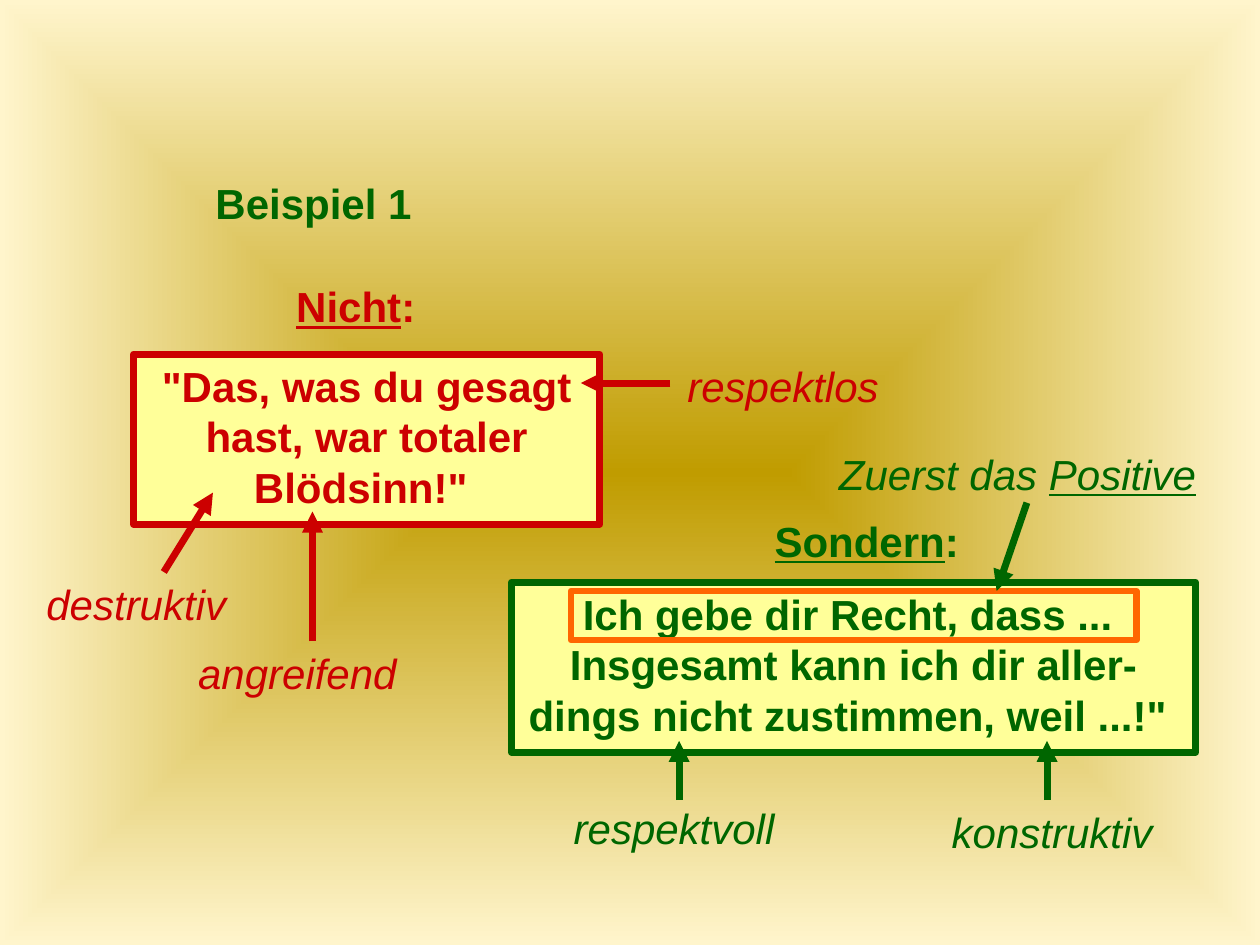
from typing import NamedTuple

from lxml import etree
from pptx import Presentation
from pptx import util as u
from pptx.dml.color import RGBColor
from pptx.enum import shapes, text
from pptx.oxml import ns

RED, GREEN, ORANGE, YELLOW = "CC0000", "006600", "FF6600", "FFFF99"
GOLD, CREAM = "C09C00", "FFF5CC"
LINE_WIDTH = 4
CENTER, LEFT = text.PP_ALIGN.CENTER, text.PP_ALIGN.LEFT


class Box(NamedTuple):
    left: float
    top: float
    width: float
    height: float


class Label(NamedTuple):
    box: Box
    content: str
    color: str
    underlined: str = ""
    bold: bool = False
    align: text.PP_ALIGN = CENTER


class Quote(NamedTuple):
    box: Box
    content: str
    color: str


class Arrow(NamedTuple):
    start: tuple[float, float]
    end: tuple[float, float]
    color: str


QUOTES = [
    Quote(Box(1.06, 2.81, 3.7, 1.35),
          '"Das, was du gesagt hast, war totaler Blödsinn!" ', RED),
    Quote(Box(4.06, 4.62, 5.43, 1.35),
          "Ich gebe dir Recht, dass ... \nInsgesamt kann ich dir aller-\n"
          'dings nicht zustimmen, weil ...!" ', GREEN),
]
TITLE = Label(Box(1.61, 1.36, 2.13, 0.5), "Beispiel 1", GREEN, bold=True, align=LEFT)
LABELS = [
    Label(Box(2.24, 2.18, 1.26, 0.5), "Nicht: ", RED, "Nicht", bold=True),
    Label(Box(6.02, 4.04, 1.81, 0.5), "Sondern: ", GREEN, "Sondern", bold=True),
    Label(Box(0.27, 4.54, 2.28, 0.5), "destruktiv", RED, align=LEFT),
    Label(Box(5.31, 2.81, 1.81, 0.5), "respektlos", RED),
    Label(Box(1.14, 5.09, 2.44, 0.5), "angreifend", RED),
    Label(Box(4.13, 6.32, 2.44, 0.5), "respektvoll", GREEN),
    Label(Box(7.13, 6.35, 2.44, 0.5), "konstruktiv", GREEN),
    Label(Box(6.5, 3.51, 3.15, 0.5), "Zuerst das Positive", GREEN, "Positive"),
]
HIGHLIGHT = Box(4.53, 4.69, 4.49, 0.39)
ARROWS = [
    Arrow((1.3, 4.54), (1.69, 3.91), RED),
    Arrow((2.48, 5.09), (2.48, 4.06), RED),
    Arrow((5.32, 3.04), (4.61, 3.04), RED),
    Arrow((5.39, 6.35), (5.39, 5.88), GREEN),
    Arrow((8.31, 6.35), (8.31, 5.88), GREEN),
    Arrow((8.15, 3.99), (7.91, 4.69), GREEN),
]


def rgb(color: str) -> RGBColor:
    return RGBColor.from_string(color)


def inches(values) -> list[u.Length]:
    return [u.Inches(value) for value in values]


def style_paragraph(paragraph, color: str, bold: bool, align: text.PP_ALIGN) -> None:
    """Bold text is upright; every other text is italic."""
    paragraph.alignment = align
    font = paragraph.font
    font.name, font.size = "Arial", u.Pt(24)
    font.bold, font.italic = bold, not bold
    font.color.rgb = rgb(color)


def fill_label(shape, label: Label) -> None:
    frame = shape.text_frame
    frame.word_wrap = True
    frame.vertical_anchor = text.MSO_ANCHOR.TOP
    paragraph = frame.paragraphs[0]
    style_paragraph(paragraph, label.color, label.bold, label.align)
    if label.underlined:
        parts = label.content.partition(label.underlined)
    else:
        parts = (label.content,)
    for part in filter(None, parts):
        run = paragraph.add_run()
        run.text = part
        if part == label.underlined:
            run.font.underline = True


def add_label(slide, label: Label) -> None:
    fill_label(slide.shapes.add_textbox(*inches(label.box)), label)


def add_frame(slide, box: Box, color: str, width: float):
    """Add an unfilled rectangle with a coloured outline."""
    shape = slide.shapes.add_shape(shapes.MSO_SHAPE.RECTANGLE, *inches(box))
    shape.shadow.inherit = False
    shape.fill.background()
    shape.line.color.rgb = rgb(color)
    shape.line.width = u.Pt(width)
    return shape


def add_quote(slide, quote: Quote) -> None:
    shape = add_frame(slide, quote.box, quote.color, LINE_WIDTH)
    shape.fill.solid()
    shape.fill.fore_color.rgb = rgb(YELLOW)
    frame = shape.text_frame
    frame.word_wrap = True
    frame.vertical_anchor = text.MSO_ANCHOR.TOP
    frame.text = quote.content
    for paragraph in frame.paragraphs:
        style_paragraph(paragraph, quote.color, True, CENTER)


def add_arrow(slide, arrow: Arrow) -> None:
    connector = slide.shapes.add_connector(
        shapes.MSO_CONNECTOR.STRAIGHT, *inches(arrow.start + arrow.end))
    connector.line.color.rgb = rgb(arrow.color)
    connector.line.width = u.Pt(LINE_WIDTH)
    properties = connector.element.spPr
    line = properties.find(ns.qn("a:ln"))
    etree.SubElement(line, ns.qn("a:tailEnd"), type="triangle")
    etree.SubElement(properties, ns.qn("a:effectLst"))


def set_background(slide) -> None:
    """Run a gradient from gold in the centre to cream at the edges."""
    fill = slide.background.fill
    fill.gradient()
    for stop, position, color in zip(fill.gradient_stops, (0, 1), (GOLD, CREAM)):
        stop.position = position
        stop.color.rgb = rgb(color)
    gradient = slide.element.find(".//" + ns.qn("a:gradFill"))
    gradient.remove(gradient.find(ns.qn("a:lin")))
    path = etree.SubElement(gradient, ns.qn("a:path"), path="shape")
    sides = dict.fromkeys("ltrb", "50000")
    etree.SubElement(path, ns.qn("a:fillToRect"), sides)


def main() -> None:
    presentation = Presentation()
    presentation.slide_width, presentation.slide_height = inches((10, 7.5))
    slide = presentation.slides.add_slide(
        presentation.slide_layouts.get_by_name("Title Only"))
    set_background(slide)

    title = slide.shapes.title
    title.left, title.top, title.width, title.height = inches(TITLE.box)
    fill_label(title, TITLE)
    for quote in QUOTES:
        add_quote(slide, quote)
    for label in LABELS:
        add_label(slide, label)
    add_frame(slide, HIGHLIGHT, ORANGE, 3.5)
    for arrow in ARROWS:
        add_arrow(slide, arrow)
    presentation.save("out.pptx")


if __name__ == "__main__":
    main()
